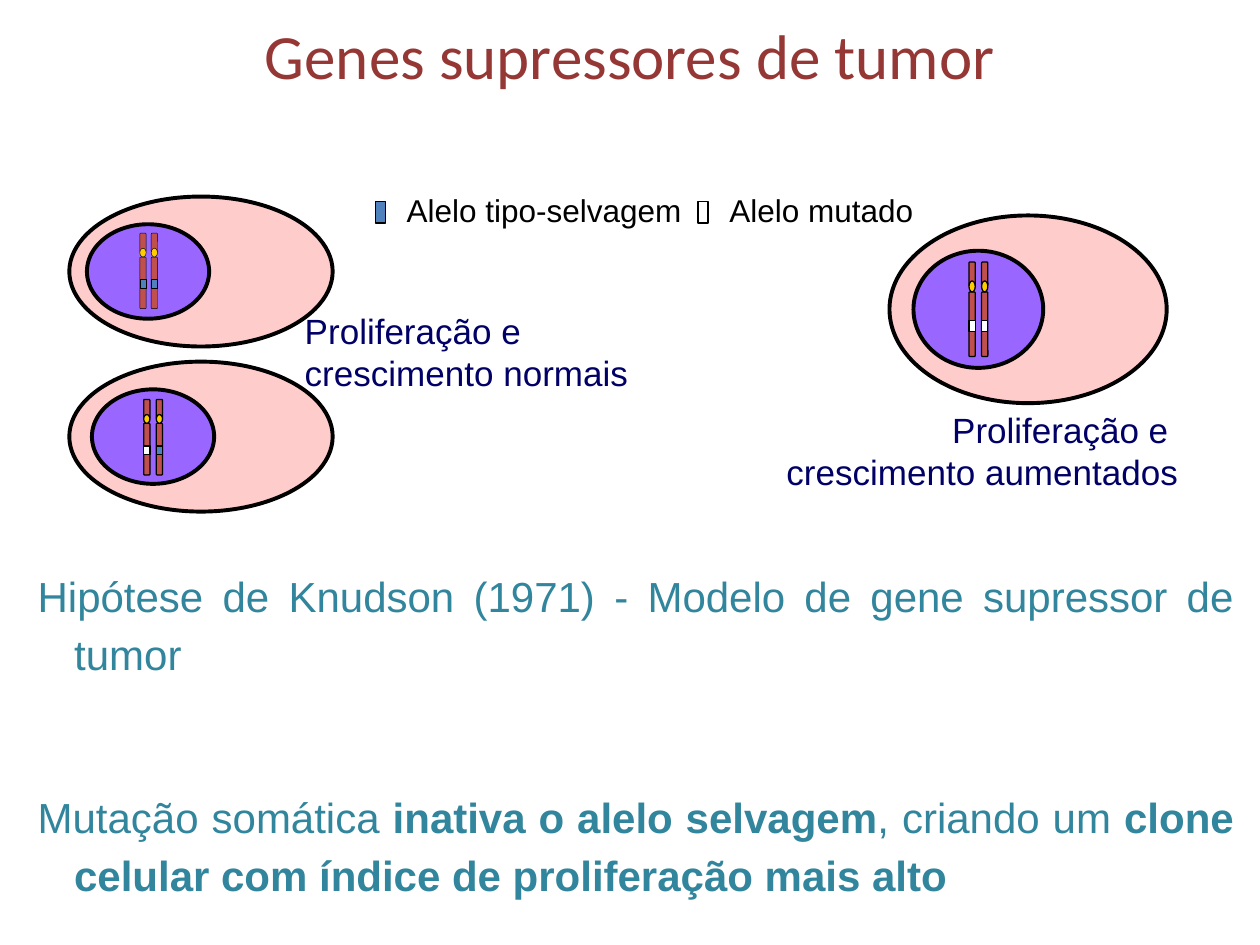
from pptx import Presentation
from pptx.dml.color import RGBColor
from pptx.enum.shapes import MSO_SHAPE as Shape
from pptx.enum.text import MSO_ANCHOR as Anchor, PP_ALIGN as Align
from pptx.util import Inches, Pt

COLORS = {
    "title": "953735", "body": "31859C", "label": "000066", "black": "000000",
    "cytoplasm": "FFCCCC", "nucleus": "9966FF", "arm": "C0504D",
    "centromere": "FFCC00", "wild": "4F81BD", "mutant": "FFFFFF",
}

TITLE = "Genes supressores de tumor"
BODY = [
    [("Hipótese de Knudson (1971) - Modelo de gene supressor de tumor", False)],
    [("Mutação somática ", False), ("inativa o alelo selvagem", True),
     (", criando um ", False),
     ("clone celular com índice de proliferação mais alto", True)],
]
LEGEND = [
    ("Alelo tipo-selvagem", "wild", 2.98, 2.4),
    ("Alelo mutado", "mutant", 5.54, 1.67),
]
LABELS = [
    (["Proliferação e", "crescimento normais"], (2.32, 2.41, 2.79, 0.77), Align.LEFT),
    (["Proliferação e ", "crescimento aumentados"], (6.12, 3.19, 3.33, 0.77), Align.RIGHT),
]
CELLS = [
    {"cell": (0.55, 2.87, 2.09, 1.19), "nucleus": (0.73, 3.09, 0.97, 0.75),
     "chromosomes": (1.14, 1.24), "top": 3.17, "scale": 1,
     "alleles": ("mutant", "wild"), "line": 0.75},
    {"cell": (0.55, 1.56, 2.09, 1.19), "nucleus": (0.69, 1.78, 0.97, 0.75),
     "chromosomes": (1.11, 1.2), "top": 1.85, "scale": 1,
     "alleles": ("wild", "wild"), "line": 0.25},
    {"cell": (7.06, 1.71, 2.2, 1.49), "nucleus": (7.25, 1.99, 1.03, 0.93),
     "chromosomes": (7.69, 7.79), "top": 2.08, "scale": 1.25,
     "alleles": ("mutant", "mutant"), "line": 0.75},
]
CHROMOSOME_WIDTH = 0.05
CHROMOSOME_PARTS = [
    (Shape.ROUNDED_RECTANGLE, "arm", 0, 0.15),
    (Shape.ROUNDED_RECTANGLE, "arm", 0.19, 0.41),
    (Shape.OVAL, "centromere", 0.12, 0.07),
    (Shape.RECTANGLE, "allele", 0.37, 0.07),
]


def color(name):
    return RGBColor.from_string(COLORS[name])


def add_figure(parent, kind, box, fill, line):
    figure = parent.shapes.add_shape(kind, *map(Inches, box))
    figure.shadow.inherit = False
    figure.fill.solid()
    figure.fill.fore_color.rgb = color(fill)
    figure.line.color.rgb = color("black")
    figure.line.width = Pt(line)
    return figure


def add_text(parent, box, paragraphs, size, fill, font="Arial",
             align=Align.LEFT, wrap=False):
    frame = parent.shapes.add_textbox(*map(Inches, box)).text_frame
    frame.word_wrap = wrap
    for index, spans in enumerate(paragraphs):
        para = frame.add_paragraph() if index else frame.paragraphs[0]
        para.alignment = align
        for text, bold in spans:
            span = para.add_run()
            span.text = text
            span.font.name = font
            span.font.size = Pt(size)
            span.font.bold = bold
            span.font.color.rgb = color(fill)
    return frame


def add_cell(page, cell):
    group = page.shapes.add_group_shape()
    add_figure(group, Shape.OVAL, cell["cell"], "cytoplasm", 2.25)
    add_figure(group, Shape.OVAL, cell["nucleus"], "nucleus", 2.25)
    for left, allele in zip(cell["chromosomes"], cell["alleles"]):
        for kind, part, offset, height in CHROMOSOME_PARTS:
            box = (left, cell["top"] + offset * cell["scale"],
                   CHROMOSOME_WIDTH, height * cell["scale"])
            fill = allele if part == "allele" else part
            add_figure(group, kind, box, fill, cell["line"])


def main():
    deck = Presentation()
    deck.slide_width, deck.slide_height = Inches(10), Inches(7.5)
    page = deck.slides.add_slide(deck.slide_layouts[6])

    title = add_text(page, (0.75, 0, 8.5, 0.86), [[(TITLE, False)]], 36,
                     "title", "Calibri", Align.CENTER, True)
    title.vertical_anchor = Anchor.MIDDLE

    body = add_text(page, (0.2, 4.42, 9.69, 2.81), BODY, 24, "body",
                    align=Align.JUSTIFY, wrap=True)
    for para in body.paragraphs:
        para.line_spacing = 1.15
        properties = para._p.get_or_add_pPr()
        properties.set("marL", str(Inches(0.29)))
        properties.set("indent", str(Inches(-0.29)))
    body.paragraphs[-1].space_before = Pt(60)

    for text, allele, left, width in LEGEND:
        group = page.shapes.add_group_shape()
        add_figure(group, Shape.RECTANGLE, (left, 1.6, 0.08, 0.17), allele, 0.75)
        add_text(group, (left + 0.15, 1.47, width, 0.4), [[(text, False)]], 18, "black")

    for cell in CELLS:
        add_cell(page, cell)

    for lines, box, align in LABELS:
        add_text(page, box, [[(line, False)] for line in lines], 20, "label", align=align)

    deck.save("out.pptx")


if __name__ == "__main__":
    main()
